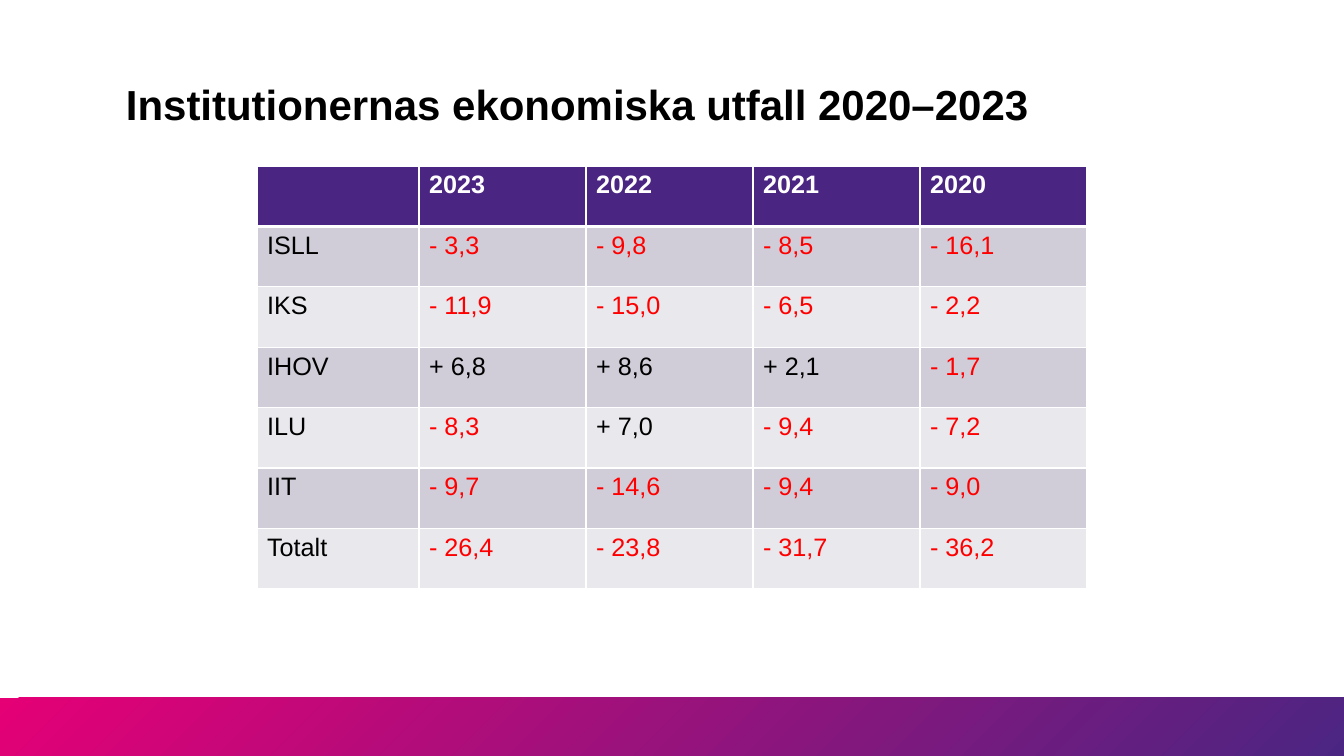
import pptx
import pptx.dml.color
import pptx.enum.shapes
import pptx.enum.text
import pptx.oxml
import pptx.oxml.ns
import pptx.util

RGB = pptx.dml.color.RGBColor
PINK = RGB(0xE5, 0x00, 0x76)
PURPLE = RGB(0x4B, 0x25, 0x82)
DARK = RGB(0xD0, 0xCD, 0xD8)
LIGHT = RGB(0xE9, 0xE8, 0xED)
WHITE = RGB(0xFF, 0xFF, 0xFF)
BLACK = RGB(0x00, 0x00, 0x00)
RED = RGB(0xFF, 0x00, 0x00)

SCALE = 914400 / 100.8
FONT = "Arial"
HEAD = ["", "2023", "2022", "2021", "2020"]
ROWS = [
    ["ISLL", "- 3,3", "- 9,8", "- 8,5", "- 16,1"],
    ["IKS", "- 11,9", "- 15,0", "- 6,5", "- 2,2"],
    ["IHOV", "+ 6,8", "+ 8,6", "+ 2,1", "- 1,7"],
    ["ILU", "- 8,3", "+ 7,0", "- 9,4", "- 7,2"],
    ["IIT", "- 9,7", "- 14,6", "- 9,4", "- 9,0"],
    ["Totalt", "- 26,4", "- 23,8", "- 31,7", "- 36,2"],
]


def px(num):
    return pptx.util.Emu(round(num * SCALE))


def add_run(para, text, size, color, bold=False):
    run = para.add_run()
    run.text = text
    run.font.name = FONT
    run.font.size = pptx.util.Pt(size)
    run.font.bold = bold
    run.font.color.rgb = color


def add_edge(cell, side, width):
    props = cell._tc.get_or_add_tcPr()
    props.append(pptx.oxml.parse_xml(
        f'<a:ln{side} {pptx.oxml.ns.nsdecls("a")} w="{pptx.util.Pt(width)}">'
        f'<a:solidFill><a:srgbClr val="{WHITE}"/></a:solidFill></a:ln{side}>'))


def add_band(slide, left, top, width, height):
    band = slide.shapes.add_shape(
        pptx.enum.shapes.MSO_SHAPE.RECTANGLE,
        px(left), px(top), px(width), px(height))
    band.shadow.inherit = False
    band.line.fill.background()
    band.fill.gradient()
    band.fill.gradient_angle = 315
    for stop, color in zip(band.fill.gradient_stops, (PINK, PURPLE)):
        stop.color.rgb = color


def add_title(slide, left, top, width, height):
    box = slide.shapes.add_textbox(px(left), px(top), px(width), px(height))
    frame = box.text_frame
    frame.word_wrap = True
    frame.vertical_anchor = pptx.enum.text.MSO_ANCHOR.MIDDLE
    para = frame.paragraphs[0]
    para.line_spacing = 0.9
    add_run(para, "Institutionernas ekonomiska utfall 2020–2023", 30, BLACK, True)


def fill_cell(cell, row, text):
    head = row == 0
    top = 3 if row == 1 else 1
    bottom = 3 if head else 1
    for side, width in (("L", 1), ("R", 1), ("T", top), ("B", bottom)):
        add_edge(cell, side, width)
    cell.fill.solid()
    cell.fill.fore_color.rgb = PURPLE if head else DARK if row % 2 else LIGHT
    if text:
        color = WHITE if head else RED if text.startswith("-") else BLACK
        add_run(cell.text_frame.paragraphs[0], text, 18, color, head)


def add_grid(slide, left, top, width, height):
    data = [HEAD] + ROWS
    table = slide.shapes.add_table(
        len(data), len(HEAD), px(left), px(top), px(width), px(height)).table
    table.horz_banding = False
    first = 162
    for col in table.columns:
        col.width = px((width - first) / (len(HEAD) - 1))
    table.columns[0].width = px(first)
    for row, texts in enumerate(data):
        table.rows[row].height = px(height / len(data))
        for col, text in enumerate(texts):
            fill_cell(table.cell(row, col), row, text)


def main():
    deck = pptx.Presentation()
    deck.slide_width, deck.slide_height = px(1344), px(756)
    slide = deck.slides.add_slide(deck.slide_layouts[6])
    add_band(slide, 0, 698, 1344, 58)
    add_title(slide, 116, 49, 992, 115)
    add_grid(slide, 257, 166, 830, 423)
    deck.save("out.pptx")


if __name__ == "__main__":
    main()
